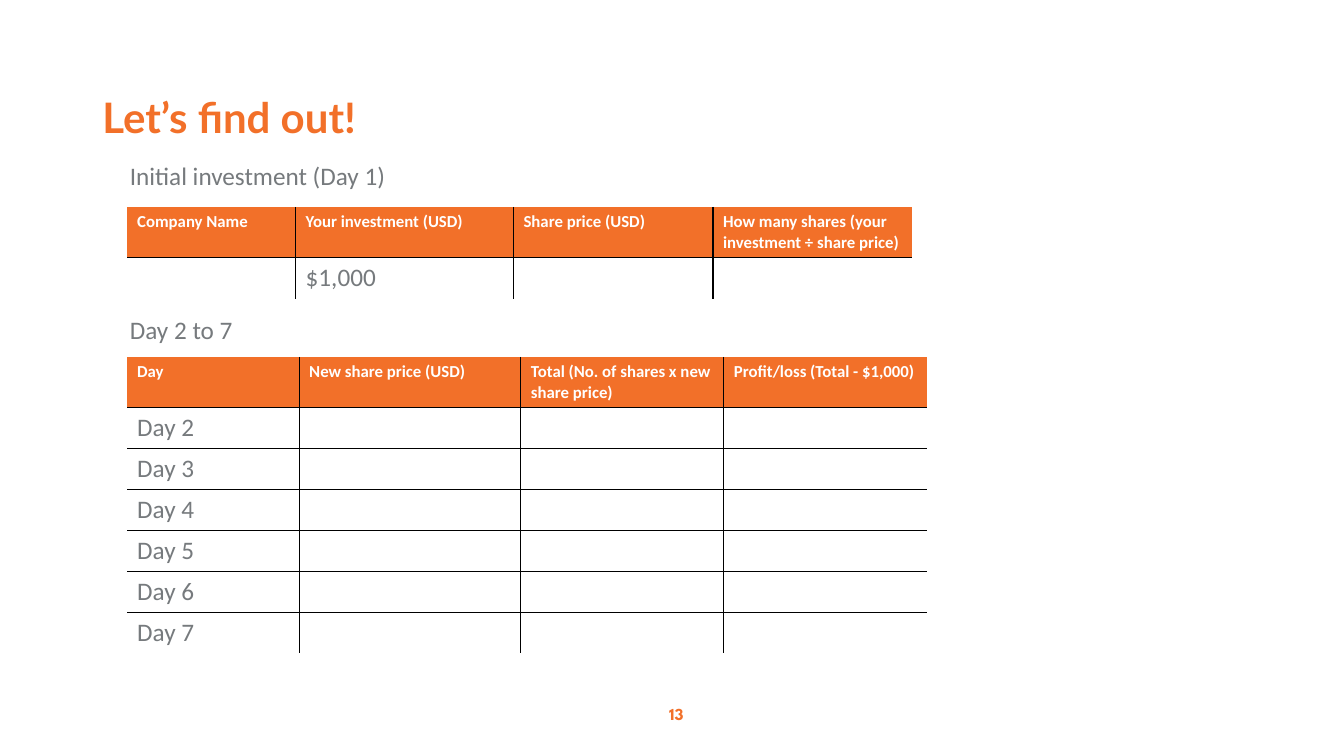
from dataclasses import dataclass

from lxml import etree
from pptx import Presentation
from pptx.dml.color import RGBColor
from pptx.enum import text
from pptx.oxml import ns
from pptx.util import Pt

ORANGE = RGBColor(0xF2, 0x70, 0x29)
GREY = RGBColor(0x76, 0x7A, 0x7D)
WHITE = RGBColor(0xFF, 0xFF, 0xFF)
BLACK = RGBColor(0x00, 0x00, 0x00)

TABLE_LEFT = 90.8
HEADER_HEIGHT = 36.4
ROW_HEIGHT = 29.25


@dataclass(frozen=True)
class Label:
    words: str
    left: float
    top: float
    width: float
    height: float
    font: str
    size: float
    color: RGBColor
    bold: bool = False
    anchor: text.MSO_ANCHOR = text.MSO_ANCHOR.TOP


@dataclass(frozen=True)
class Grid:
    top: float
    widths: list[float]
    rows: list[list[str]]


LABELS = [
    Label("Initial investment (Day 1)", 85.7, 110.9, 455, 29, "Calibri", 18, GREY),
    Label("Day 2 to 7", 85.7, 221, 455, 29, "Calibri", 18, GREY),
    Label("13", 470.9, 498.2, 30.2, 23.8, "League Spartan", 12, ORANGE, True,
          text.MSO_ANCHOR.MIDDLE),
]

GRIDS = [
    Grid(147.8, [120.4, 155.6, 142.5, 142.5], [
        ["Company Name", "Your investment (USD)", "Share price (USD)",
         "How many shares (your investment ÷ share price)"],
        ["", "$1,000", "", ""],
    ]),
    Grid(254.9, [122.9, 158.4, 145, 145], [
        ["Day", "New share price (USD)", "Total (No. of shares x new share price)",
         "Profit/loss (Total - $1,000)"],
        *[[f"Day {day}", "", "", ""] for day in range(2, 8)],
    ]),
]


def style(para, font: str, size: float, color: RGBColor, bold: bool) -> None:
    para.font.name = font
    para.font.size = Pt(size)
    para.font.bold = bold
    para.font.color.rgb = color


def add_label(page, label: Label) -> None:
    box = page.shapes.add_textbox(
        Pt(label.left), Pt(label.top), Pt(label.width), Pt(label.height))
    frame = box.text_frame
    frame.word_wrap = True
    frame.vertical_anchor = label.anchor
    frame.text = label.words
    style(frame.paragraphs[0], label.font, label.size, label.color, label.bold)


def set_borders(cell, drawn: dict[str, bool]) -> None:
    """Draw a black line on each chosen side and clear the others."""
    properties = cell._tc.get_or_add_tcPr()
    for side, visible in drawn.items():
        line = etree.SubElement(properties, ns.qn(f"a:ln{side}"), w=str(Pt(1)))
        if visible:
            fill = etree.SubElement(line, ns.qn("a:solidFill"))
            etree.SubElement(fill, ns.qn("a:srgbClr"), val=str(BLACK))
        else:
            etree.SubElement(line, ns.qn("a:noFill"))


def add_grid(page, grid: Grid) -> None:
    row_count, column_count = len(grid.rows), len(grid.widths)
    height = HEADER_HEIGHT + ROW_HEIGHT * (row_count - 1)
    table = page.shapes.add_table(
        row_count, column_count, Pt(TABLE_LEFT), Pt(grid.top),
        Pt(sum(grid.widths)), Pt(height)).table
    table.horz_banding = False
    for column, width in zip(table.columns, grid.widths):
        column.width = Pt(width)
    for r, words in enumerate(grid.rows):
        header = r == 0
        table.rows[r].height = Pt(HEADER_HEIGHT if header else ROW_HEIGHT)
        for c, word in enumerate(words):
            cell = table.cell(r, c)
            cell.text = word
            # Only the lines between cells show
            set_borders(cell, {"L": c > 0, "R": c < column_count - 1,
                               "T": r > 0, "B": r < row_count - 1})
            if header:
                cell.fill.solid()
                cell.fill.fore_color.rgb = ORANGE
            else:
                cell.fill.background()
            style(cell.text_frame.paragraphs[0], "Calibri", 12 if header else 18,
                  WHITE if header else GREY, header)


def add_title(page, words: str) -> None:
    title = page.shapes.title
    title.left, title.top, title.width, title.height = Pt(66), Pt(66), Pt(828), Pt(57.6)
    frame = title.text_frame
    frame.text = words
    frame.auto_size = text.MSO_AUTO_SIZE.NONE
    frame.vertical_anchor = text.MSO_ANCHOR.TOP
    para = frame.paragraphs[0]
    para.alignment = text.PP_ALIGN.LEFT
    para.line_spacing = 0.9
    style(para, "Lato", 30, ORANGE, True)


def main() -> None:
    deck = Presentation()
    deck.slide_width, deck.slide_height = Pt(960), Pt(540)
    page = deck.slides.add_slide(deck.slide_layouts[5])

    # Title, captions and page number
    add_title(page, "Let’s find out!")
    for label in LABELS:
        add_label(page, label)

    # Worksheets to fill in
    for grid in GRIDS:
        add_grid(page, grid)

    deck.save("out.pptx")


if __name__ == "__main__":
    main()
